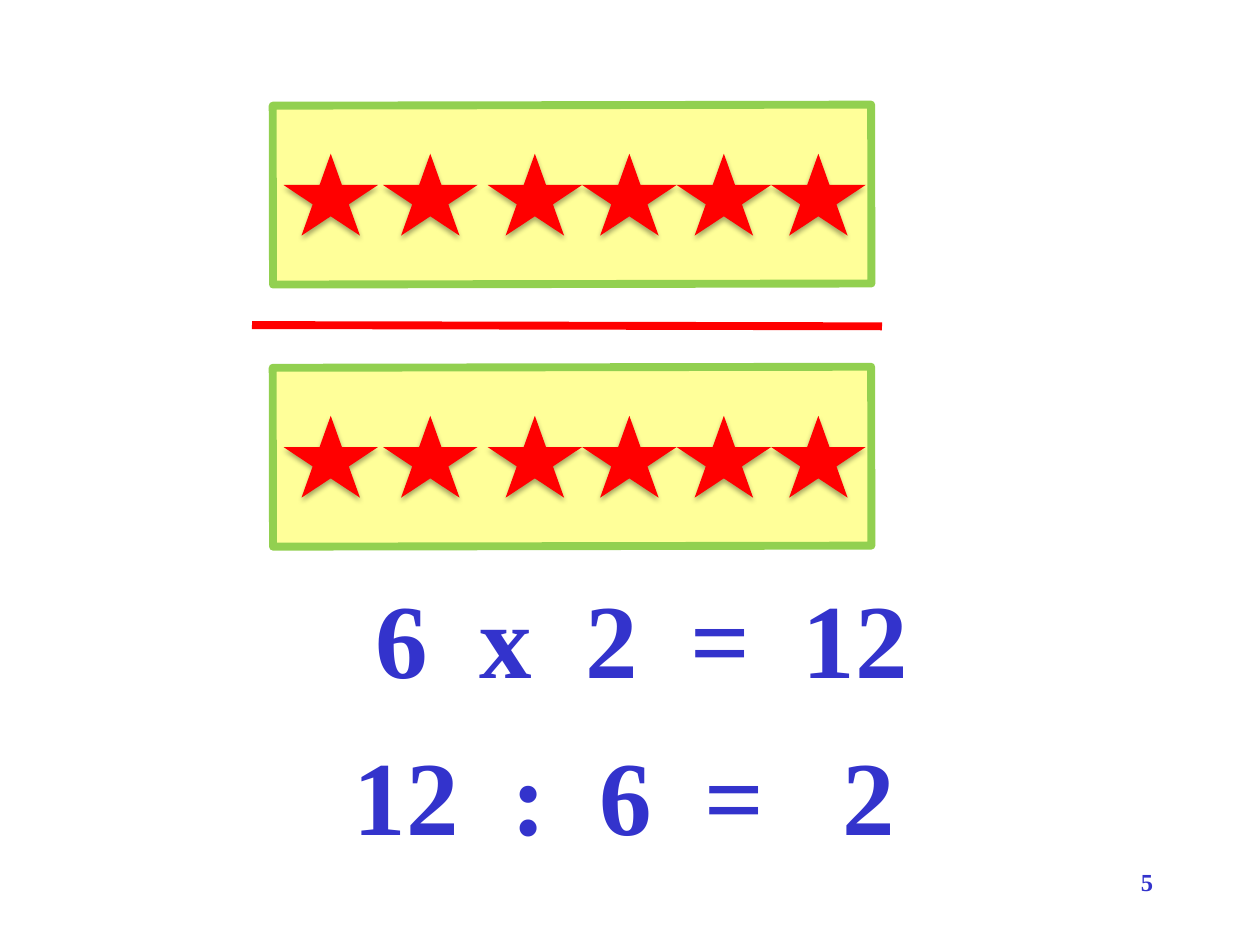
"""Draw two rows of six stars with the sums they show."""
from dataclasses import dataclass

from lxml.etree import SubElement as Sub
from pptx import Presentation
from pptx.dml.color import RGBColor as Rgb
from pptx.enum.shapes import MSO_CONNECTOR as Link, MSO_SHAPE as Kind
from pptx.enum.text import PP_ALIGN as Align
from pptx.oxml.ns import qn
from pptx.util import Inches, Pt

INK = {"text": "3333CC", "card": "FFFF99", "edge": "92D050",
       "star": "FF0000", "shade": "000000"}
FONT = "Times New Roman"
STARS = (2.25, 3.04, 3.87, 4.62, 5.37, 6.12)


@dataclass
class Sum:
    left: float
    top: float
    terms: tuple[str, ...]
    tabs: tuple[float, ...]


SUMS = (
    Sum(2.25, 4.42, ("6", "x", "2", "=", "12"), (0.83, 1.67, 2.5, 3.39)),
    Sum(2.08, 5.67, ("12", ":", "6", "=", "2"), (1.25, 1.95, 2.78, 3.88)),
)


def color(name: str) -> Rgb:
    return Rgb.from_string(INK[name])


def write(slide, text: str, box: tuple, *, size: int, align=Align.LEFT,
          inset: tuple = (0.1, 0.05), tabs: tuple = ()) -> None:
    frame = slide.shapes.add_textbox(*map(Inches, box)).text_frame
    frame.word_wrap = True
    frame.margin_left, frame.margin_top = map(Inches, inset)
    para = frame.paragraphs[0]
    para.alignment = align
    if tabs:
        stops = Sub(para._p.get_or_add_pPr(), qn("a:tabLst"))
        for stop in tabs:
            Sub(stops, qn("a:tab"), pos=str(Inches(stop)), algn="l")
    run = para.add_run()
    run.text = text
    font = run.font
    font.name, font.size, font.bold = FONT, Pt(size), True
    font.color.rgb = color("text")


def shade(shape) -> None:
    glow = Sub(Sub(shape._element.spPr, qn("a:effectLst")),
               qn("a:outerShdw"), blurRad=str(Pt(3.1)), dist=str(Pt(1.8)),
               dir="5400000", rotWithShape="0")
    tint = Sub(glow, qn("a:srgbClr"), val=INK["shade"])
    Sub(tint, qn("a:alpha"), val="35000")


def add_row(slide, top: float) -> None:
    group = slide.shapes.add_group_shape().shapes
    card = group.add_shape(Kind.RECTANGLE, Inches(3.83), Inches(top - 1.67),
                           Inches(1.42), Inches(4.75))
    card.rotation = 89.9
    card.shadow.inherit = False
    card.fill.solid()
    card.fill.fore_color.rgb = color("card")
    card.line.color.rgb = color("edge")
    card.line.width = Pt(4.5)
    for left in STARS:
        star = group.add_shape(Kind.STAR_5_POINT, Inches(left),
                               Inches(top + 0.38), Inches(0.75), Inches(0.65))
        star.fill.solid()
        star.fill.fore_color.rgb = color("star")
        star.line.fill.background()
        shade(star)


def main() -> None:
    deck = Presentation()
    deck.slide_width, deck.slide_height = Inches(10), Inches(7.5)
    slide = deck.slides.add_slide(deck.slide_layouts[6])
    write(slide, "5", (7.17, 6.83, 2.08, 0.5), size=14, align=Align.RIGHT)
    for item in SUMS:
        write(slide, "\t".join(item.terms), (item.left, item.top, 5.83, 1.1),
              size=60, inset=(0.73, 0.13), tabs=item.tabs)
    for top in (0.84, 2.92):
        add_row(slide, top)
    bar = slide.shapes.add_connector(Link.STRAIGHT, Inches(2), Inches(2.58),
                                     Inches(7), Inches(2.59))
    bar.line.color.rgb = color("star")
    bar.line.width = Pt(4.5)
    Sub(bar._element.spPr, qn("a:effectLst"))
    deck.save("out.pptx")


if __name__ == "__main__":
    main()
